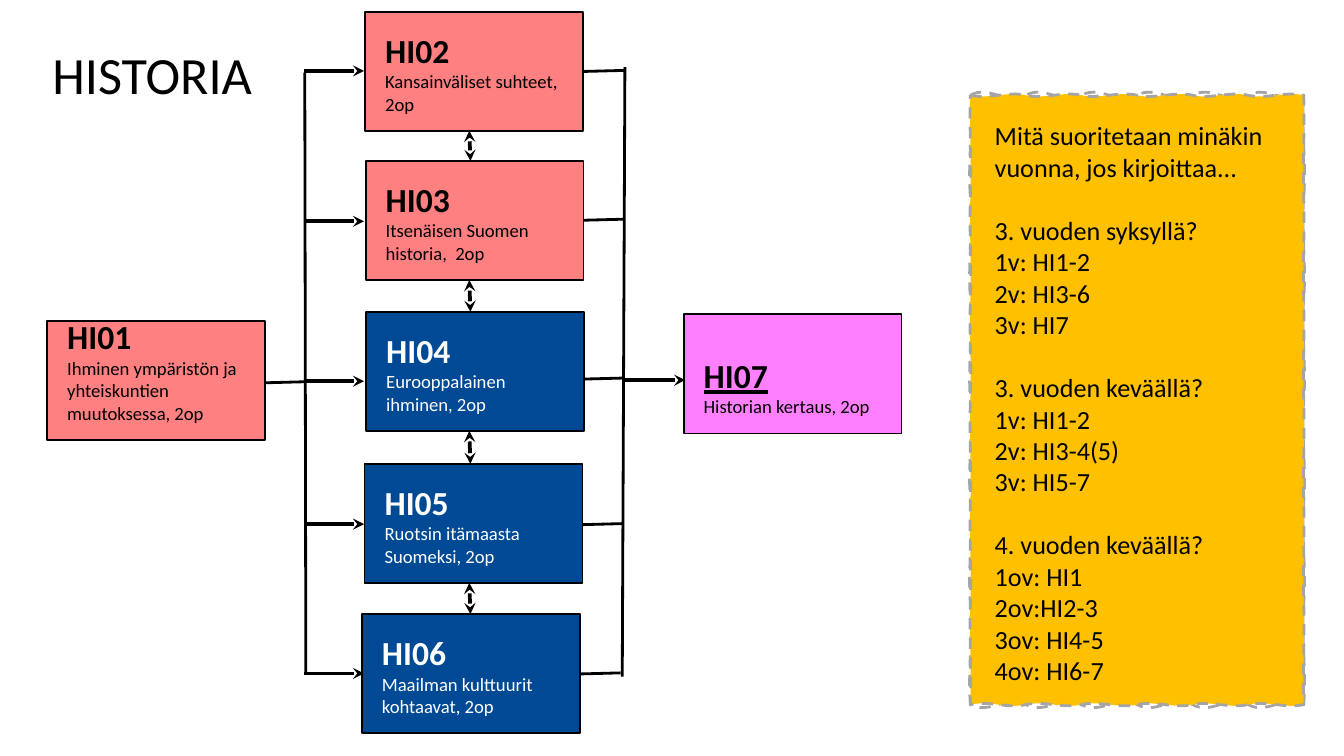
import copy

from lxml import etree
from pptx import Presentation
from pptx import util as u
from pptx.dml.color import RGBColor
from pptx.enum import dml, shapes, text
from pptx.oxml import ns

COLORS = {
    "black": "000000", "white": "FFFFFF", "red": "FF8080", "blue": "004A95",
    "pink": "FF80FF", "yellow": "FFC000", "gray": "A5A5A5",
}
RGB = {name: RGBColor.from_string(value) for name, value in COLORS.items()}


def set_format(target, values):
    for name, value in values.items():
        setattr(target, name, value)


def connect(x1, y1, x2, y2, width=1.5, head=False, tail=False):
    link = slide.shapes.add_connector(
        shapes.MSO_CONNECTOR.STRAIGHT, u.Cm(x1), u.Cm(y1), u.Cm(x2), u.Cm(y2))
    link.line.color.rgb = RGB["black"]
    link.line.width = u.Pt(width)
    line_xml = link.line._get_or_add_ln()
    for tag, wanted in (("a:headEnd", head), ("a:tailEnd", tail)):
        if wanted:
            etree.SubElement(line_xml, ns.qn(tag)).set("type", "stealth")
    etree.SubElement(link._element.spPr, ns.qn("a:effectLst"))


prs = Presentation()
set_format(prs, {"slide_width": u.Cm(25.4), "slide_height": u.Cm(14.28)})
slide = prs.slides.add_slide(prs.slide_layouts[5])

# Title
title = slide.shapes.title
set_format(title, {"left": u.Cm(0.81), "top": u.Cm(0.7),
                   "width": u.Cm(8.61), "height": u.Cm(1.4)})
set_format(title.text_frame, {
    "text": "HISTORIA", "word_wrap": True,
    "auto_size": text.MSO_AUTO_SIZE.NONE, "vertical_anchor": text.MSO_ANCHOR.TOP,
    "margin_left": u.Cm(0.18), "margin_right": u.Cm(0.18),
    "margin_top": u.Cm(0.09), "margin_bottom": u.Cm(0.09)})
heading = title.text_frame.paragraphs[0]
heading.alignment = text.PP_ALIGN.LEFT
set_format(heading.runs[0].font, {"name": "Calibri", "size": u.Pt(28)})
heading.runs[0].font.color.rgb = RGB["black"]

# Courses: code, description, left, top, fill, text colour
COURSE_W, COURSE_H = 4.12, 2.25
middle_courses = [
    ("HI02", "Kansainväliset suhteet, 2op", 6.9, 0.22, "red", "black"),
    ("HI03", "Itsenäisen Suomen historia,  2op", 6.91, 3.04, "red", "black"),
    ("HI04", "Eurooppalainen ihminen, 2op", 6.92, 5.89, "blue", "white"),
    ("HI05", "Ruotsin itämaasta Suomeksi, 2op", 6.89, 8.76, "blue", "white"),
    ("HI06", "Maailman kulttuurit kohtaavat, 2op", 6.84, 11.6, "blue", "white"),
]
first_course = ("HI01", "Ihminen ympäristön ja yhteiskuntien muutoksessa, 2op",
                0.89, 6.06, "red", "black")
last_course = ("HI07", "Historian kertaus, 2op", 12.92, 5.94, "pink", "black")

# Arrows into and lines out of the middle courses
entry_heights = [1.34, 4.18, 7.2, 9.9, 12.72]
exit_heights = [1.35, 4.16, 7.16, 9.91, 12.73]
for course, entry_y, exit_y in zip(middle_courses, entry_heights, exit_heights):
    right = course[2] + COURSE_W
    connect(5.74, entry_y, 6.88, entry_y, 2, tail=True)
    connect(right, exit_y, right + 0.77, exit_y - 0.02)

# Two-way arrows between neighbouring courses
for upper, lower in zip(middle_courses, middle_courses[1:]):
    connect(8.87, upper[3] + COURSE_H, 8.89, lower[3], 2, head=True, tail=True)

# Vertical trunks and their links to the first and last course
connect(5.76, 1.37, 5.78, 12.73)
connect(11.81, 1.27, 11.76, 12.78)
connect(5.03, 7.23, 5.79, 7.21)
connect(11.81, 7.18, 12.95, 7.18, 2, tail=True)

# Course boxes
for code, description, left, top, fill, ink in [*middle_courses, first_course, last_course]:
    box = slide.shapes.add_shape(shapes.MSO_SHAPE.RECTANGLE, u.Cm(left), u.Cm(top),
                                 u.Cm(COURSE_W), u.Cm(COURSE_H))
    box.shadow.inherit = False
    box.fill.solid()
    box.fill.fore_color.rgb = RGB[fill]
    box.line.color.rgb = RGB["black"]
    box.line.width = u.Pt(1)
    set_format(box.text_frame, {
        "text": f"{code}\n{description}", "word_wrap": True,
        "vertical_anchor": text.MSO_ANCHOR.BOTTOM,
        "margin_left": u.Cm(0.38), "margin_right": u.Cm(0.38),
        "margin_top": u.Cm(0.3), "margin_bottom": u.Cm(0.3)})
    code_format = {"size": u.Pt(18), "bold": True, "underline": code == "HI07"}
    description_format = {"size": u.Pt(10), "bold": False}
    for line, values in zip(box.text_frame.paragraphs, (code_format, description_format)):
        line.alignment = text.PP_ALIGN.LEFT
        set_format(line.runs[0].font, {"name": "Calibri", **values})
        line.runs[0].font.color.rgb = RGB[ink]

# Note sheet, each side divided into equal segments
NOTE_X, NOTE_Y, NOTE_W, NOTE_H, WAVES = 18.34, 1.8, 6.3, 11.51, 6
corners = [(0, 0), (NOTE_W, 0), (NOTE_W, NOTE_H), (0, NOTE_H), (0, 0)]
knots = [(x1 + (x2 - x1) * wave / WAVES, y1 + (y2 - y1) * wave / WAVES)
         for (x1, y1), (x2, y2) in zip(corners, corners[1:])
         for wave in range(WAVES)] + [(0, 0)]
edge = [(u.Cm(NOTE_X + x), u.Cm(NOTE_Y + y)) for x, y in knots]
builder = slide.shapes.build_freeform(*edge[0])
builder.add_line_segments(edge[1:], close=True)
note = builder.convert_to_shape()
note.shadow.inherit = False
note.fill.solid()
note.fill.fore_color.rgb = RGB["yellow"]
note.line.color.rgb = RGB["gray"]
set_format(note.line, {"width": u.Pt(1.5), "dash_style": dml.MSO_LINE.DASH})

# Hand-drawn edge: a loose unfilled outline below a calmer filled one
sheet = note._element.spPr.find(".//" + ns.qn("a:path"))
outline = copy.deepcopy(sheet)
outline.set("fill", "none")
sheet.addprevious(outline)
for contour, ripple in ((outline, 0.2), (sheet, -0.08)):
    segments = contour.findall(ns.qn("a:lnTo"))
    for segment, (x1, y1), (x2, y2) in zip(segments, knots, knots[1:]):
        across, down = (0, ripple) if y1 == y2 else (ripple / 4, 0)
        curve = etree.Element(ns.qn("a:cubicBezTo"))
        for part, side in ((1 / 3, -1), (2 / 3, 1), (1, 0)):
            point = etree.SubElement(curve, ns.qn("a:pt"))
            point.set("x", str(u.Cm(x1 + (x2 - x1) * part + across * side)))
            point.set("y", str(u.Cm(y1 + (y2 - y1) * part + down * side)))
        contour.replace(segment, curve)

# Note text: a gap comes before each exam date
note_lines = [
    "Mitä suoritetaan minäkin vuonna, jos kirjoittaa...",
    "3. vuoden syksyllä?", "1v: HI1-2", "2v: HI3-6", "3v: HI7",
    "3. vuoden keväällä?", "1v: HI1-2", "2v: HI3-4(5)", "3v: HI5-7",
    "4. vuoden keväällä?", "1ov: HI1", "2ov:HI2-3", "3ov: HI4-5", "4ov: HI6-7",
]
set_format(note.text_frame, {
    "text": "\n".join(note_lines), "word_wrap": True,
    "vertical_anchor": text.MSO_ANCHOR.TOP,
    "margin_left": u.Cm(0.46), "margin_right": u.Cm(0.46),
    "margin_top": u.Cm(0.46), "margin_bottom": u.Cm(0.46)})
for line in note.text_frame.paragraphs:
    gap = 17 if "vuoden" in line.text else 0
    set_format(line, {"alignment": text.PP_ALIGN.LEFT, "space_before": u.Pt(gap)})
    set_format(line.runs[0].font, {"name": "Calibri", "size": u.Pt(14)})
    line.runs[0].font.color.rgb = RGB["black"]

prs.save("out.pptx")
